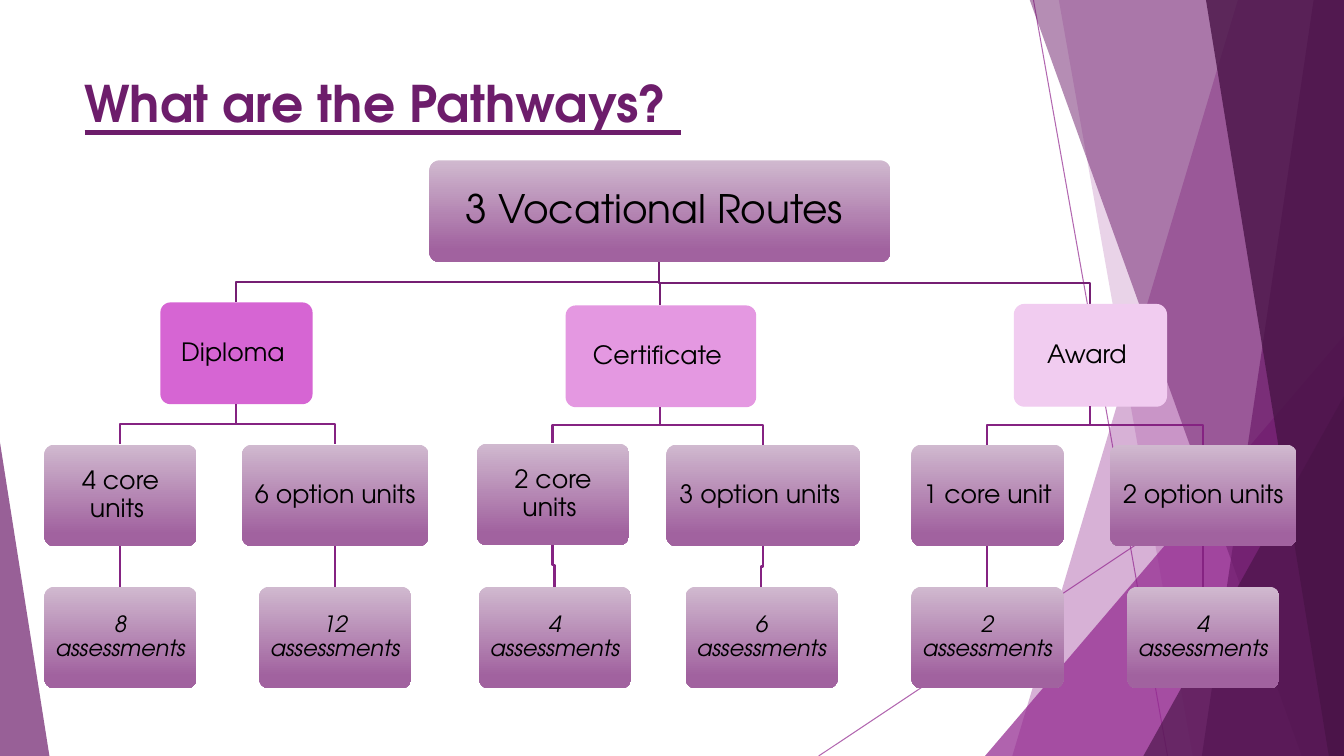
from lxml.etree import SubElement
from pptx import Presentation
from pptx.dml.color import RGBColor
from pptx.enum.shapes import MSO_CONNECTOR, MSO_SHAPE
from pptx.enum.text import MSO_ANCHOR, PP_ALIGN
from pptx.oxml.ns import qn
from pptx.util import Pt

PX = 9144  # 100 px to the inch
WIDE, HIGH = 1333, 750
CARD = 151, 101
FACE = "TeX Gyre Adventor"

HUES = {
    "vivid": "92278F", "plum": "6D1D6B", "dark": "491447",
    "trunk": "751F73", "twig": "852382", "ink": "000000",
    "pale": "D0B9CF", "deep": "A1629F",
    "orchid": "D665D3", "pink": "E498E1", "blush": "F1CCF0",
}

# Right-hand bands: top x, bottom x, hue, alpha
BANDS = [
    (1228, 1004, "vivid", 36),
    (1050, 1183, "vivid", 20),
    (1021, 1291, "plum", 50),
    (1303, 1192, "plum", 70),
    (1196, 1318, "dark", 80),
]
# Wedges: left, top, width, height, apex, hue, alpha
WEDGES = {
    "middle": (977, 333, 356, 417, 1, "vivid", 72),
    "corner": (1134, 393, 199, 357, 1, "dark", 66),
    "left": (0, 439, 49, 311, 0, "plum", 70),
}

# Cards: words, left, top, width, fill hue, children
TREE = ("3 Vocational Routes ", 426, 159, 457, None, [
    ("Diploma ", 159, 300, 151, "orchid", [
        ("4 core units ", 44, 441, 151, None, [("8 assessments", 44, 582, 151, None, [])]),
        ("6 option units ", 240, 441, 185, None, [("12 assessments", 257, 582, 151, None, [])]),
    ]),
    ("Certificate ", 561, 303, 189, "pink", [
        ("2 core units ", 473, 440, 151, None, [("4 assessments", 475, 582, 151, None, [])]),
        ("3 option units ", 661, 441, 192, None, [("6 assessments", 680, 582, 151, None, [])]),
    ]),
    ("Award ", 1006, 302, 151, "blush", [
        ("1 core unit ", 904, 441, 151, None, [("2 assessments ", 904, 582, 151, None, [])]),
        ("2 option units ", 1101, 441, 185, None, [("4 assessments ", 1118, 582, 151, None, [])]),
    ]),
])

# Text format by tree level
PLAIN = {"size": Pt(18)}
FONTS = [{"size": Pt(28)}, PLAIN, PLAIN, {"size": Pt(16), "italic": True}]


def hue(name):
    return RGBColor.from_string(HUES[name])


def px(*nums):
    return [n * PX for n in nums]


def put(obj, vals):
    for key, val in vals.items():
        setattr(obj, key, val)


def fade(shape, alpha):
    tint = next(shape.element.iter(qn("a:srgbClr")))
    SubElement(tint, qn("a:alpha"), val=str(alpha * 1000))


def paint(shape, name):
    shape.shadow.inherit = False
    shape.fill.solid()
    shape.fill.fore_color.rgb = hue(name)
    shape.line.fill.background()


def stroke(shape, name, size):
    shape.line.color.rgb = hue(name)
    shape.line.width = Pt(size)


def write(shape, words, gap, font, tone, frame, para):
    text = shape.text_frame
    sides = dict.fromkeys(("margin_left", "margin_right"), gap[0] * PX)
    ends = dict.fromkeys(("margin_top", "margin_bottom"), gap[1] * PX)
    put(text, {"word_wrap": True, **sides, **ends, **frame})
    line = text.paragraphs[0]
    put(line, para)
    run = line.add_run()
    run.text = words
    put(run.font, {"name": FACE, **font})
    run.font.color.rgb = hue(tone)


def rule(shapes, ends, name, size):
    line = shapes.add_connector(MSO_CONNECTOR.STRAIGHT, *px(*ends))
    stroke(line, name, size)
    SubElement(line.element.spPr, qn("a:effectLst"))
    return line


def form(shapes, points, close):
    pen = shapes.build_freeform(*points[0], scale=PX)
    pen.add_line_segments(points[1:], close=close)
    shape = pen.convert_to_shape()
    shape.shadow.inherit = False
    return shape


def band(shapes, top, foot, name, alpha):
    edge = [(top, -1), (WIDE, -1), (WIDE, HIGH), (foot, HIGH)]
    shape = form(shapes, edge, True)
    paint(shape, name)
    fade(shape, alpha)


def wedge(shapes, left, top, wide, high, apex, name, alpha):
    shape = shapes.add_shape(MSO_SHAPE.ISOSCELES_TRIANGLE, *px(left, top, wide, high))
    shape.adjustments[0] = apex
    paint(shape, name)
    fade(shape, alpha)


def link(shapes, start, end, name):
    (x1, y1), (x2, y2) = start, end
    if x1 == x2:
        rule(shapes, (x1, y1, x2, y2), name, 1.5)
        return
    mid = (y1 + y2) // 2
    elbow = form(shapes, [start, (x1, mid), (x2, mid), end], False)
    elbow.fill.background()
    stroke(elbow, name, 1.5)


def card(shapes, words, left, top, wide, name, level):
    box = shapes.add_shape(MSO_SHAPE.ROUNDED_RECTANGLE, *px(left, top, wide, CARD[1]))
    box.adjustments[0] = 0.1
    paint(box, name or "deep")
    if not name:
        box.fill.gradient()
        box.fill.gradient_angle = 270
        for stop, tone, spot in zip(box.fill.gradient_stops, ("pale", "deep"), (0, 0.88)):
            stop.color.rgb = hue(tone)
            stop.position = spot
    if name == "blush":
        stroke(box, name, 0.75)
    gap = 7 if level else 12
    write(box, words, (gap, gap), FONTS[level], "ink",
          {"vertical_anchor": MSO_ANCHOR.MIDDLE},
          {"alignment": PP_ALIGN.CENTER, "line_spacing": 0.9})


def grow(shapes, node, level=0):
    words, left, top, wide, name, kids = node
    card(shapes, words, left, top, wide, name, level)
    foot = left + wide // 2, top + CARD[1]
    for kid in kids:
        head = kid[1] + kid[3] // 2, kid[2]
        link(shapes, foot, head, "twig" if level else "trunk")
        grow(shapes, kid, level + 1)


def main():
    deck = Presentation()
    put(deck, {"slide_width": WIDE * PX, "slide_height": HIGH * PX})
    shapes = deck.slides.add_slide(deck.slide_layouts[6]).shapes

    # Backdrop
    for ends in ((1025, 0, 1158, HIGH), (WIDE, 403, 812, HIGH)):
        fade(rule(shapes, ends, "vivid", 0.75), 70)
    for item in BANDS[:2]:
        band(shapes, *item)
    wedge(shapes, *WEDGES["middle"])
    for item in BANDS[2:]:
        band(shapes, *item)
    wedge(shapes, *WEDGES["corner"])
    wedge(shapes, *WEDGES["left"])

    # Tree of routes
    grow(shapes, TREE)

    # Title
    title = shapes.add_textbox(*px(74, 67, 992, 144))
    write(title, "What are the Pathways? ", (10, 5),
          {"size": Pt(36), "bold": True, "underline": True}, "plum",
          {"vertical_anchor": MSO_ANCHOR.TOP}, {"alignment": PP_ALIGN.LEFT})

    deck.save("out.pptx")


if __name__ == "__main__":
    main()
